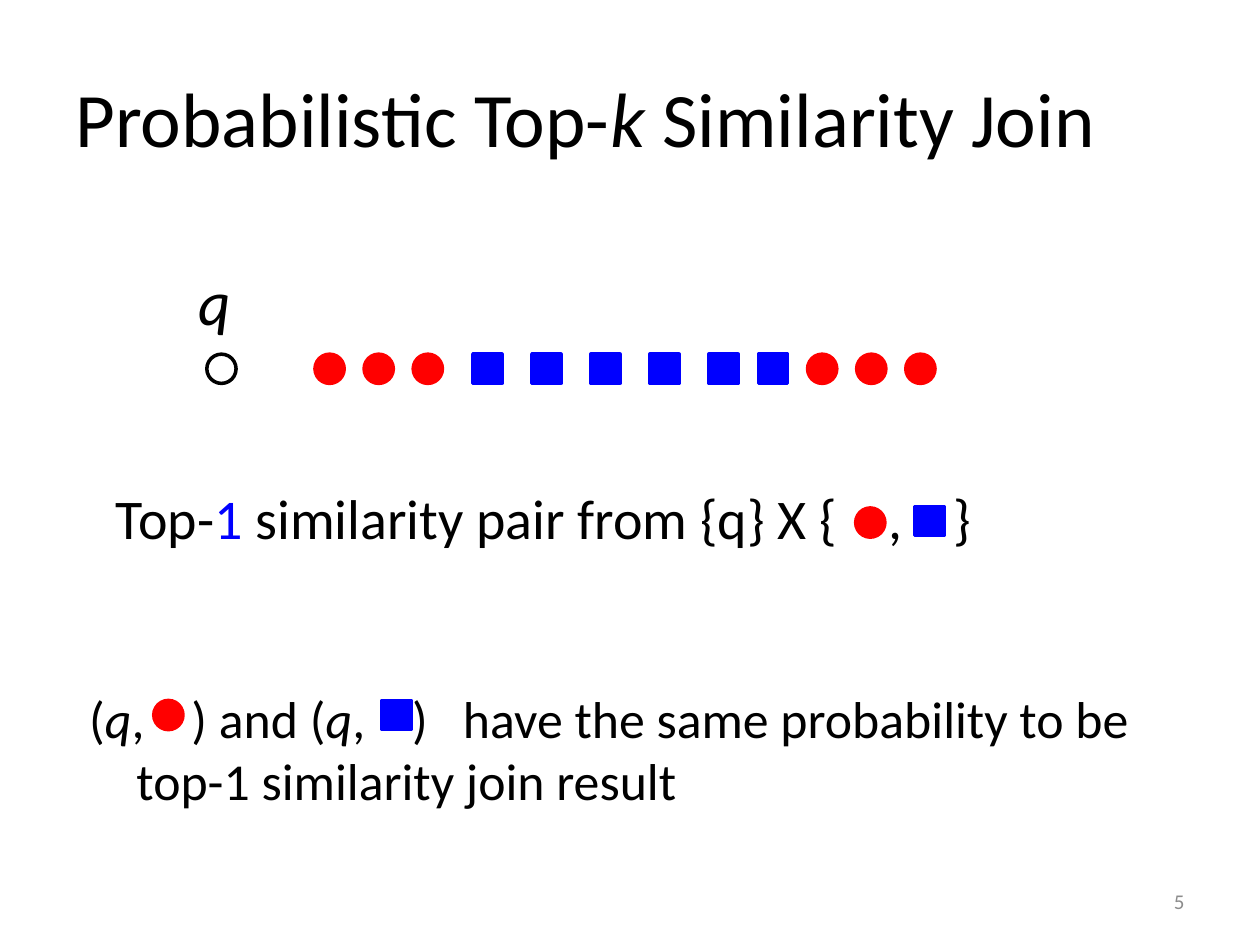
from dataclasses import dataclass

from pptx import Presentation
from pptx import util as u
from pptx.dml.color import RGBColor
from pptx.enum import shapes, text


@dataclass(frozen=True)
class Theme:
    font: str = "Calibri"
    black: str = "000000"
    white: str = "FFFFFF"
    red: str = "FF0000"
    blue: str = "0000FF"
    grey: str = "8C8C8C"
    title: float = 44
    label: float = 36
    pair: float = 32
    result: float = 29.6
    number: float = 12
    outline: float = 2
    space_em: float = 0.226


T = Theme()
HANG = 0.95
MARK = 0.59
ROW_TOP = 7.14

MARKS = {
    "query": (shapes.MSO_SHAPE.OVAL, T.white, T.black),
    "dot": (shapes.MSO_SHAPE.OVAL, T.red, T.red),
    "square": (shapes.MSO_SHAPE.RECTANGLE, T.blue, T.blue),
}

ROW = [
    ("query", 4.17, 0, 1),
    ("dot", 6.35, 0.99, 3),
    ("square", 9.53, 1.19, 5),
    ("square", 15.29, 0, 1),
    ("dot", 16.28, 0.99, 3),
]

INLINE_MARKS = [
    ("dot", 3.1, 14.12),
    ("square", 7.7, 14.12),
    ("dot", 17.25, 10.24),
    ("square", 18.44, 10.21),
]

TITLE = [("Probabilistic Top-",), ("k", "i"), (" Similarity Join",)]
LABEL = [("q", "i")]
PAIR = [(" Top-",), ("1", "blue"), (" similarity pair from {q} X {",),
        (" ", 4), (",",), (" ", 4), ("}",)]
RESULT = [("(",), ("q", "i"), (",",), (" ", 4), (") and (",), ("q", "i"),
          (",",), (" ", 4), (")",), (" ", 3),
          ("have the same probability to be top-1 similarity join result",)]
NUMBER = [("5", "grey")]

LEFT, RIGHT = text.PP_ALIGN.LEFT, text.PP_ALIGN.RIGHT
TOP, MIDDLE = text.MSO_ANCHOR.TOP, text.MSO_ANCHOR.MIDDLE

TEXTS = [
    (TITLE, (1.27, 0.76, 22.86, 3.18), T.title, MIDDLE, LEFT, 0, True),
    (NUMBER, (18.21, 17.65, 5.92, 1.02), T.number, MIDDLE, RIGHT, 0, True),
    (LABEL, (3.76, 5.16, 1.17, 1.8), T.label, TOP, LEFT, 0, False),
    (RESULT, (1.55, 13.72, 23.16, 2.69), T.result, TOP, LEFT, HANG, True),
    (PAIR, (1.83, 9.63, 22.86, 2.31), T.pair, TOP, LEFT, HANG, True),
]


def add_text(slide, runs, box, size, anchor, align, hang, wrap):
    """Add a text box whose runs may be italic, coloured or a widened space."""
    tf = slide.shapes.add_textbox(*map(u.Cm, box)).text_frame
    tf.word_wrap = wrap
    tf.vertical_anchor = anchor
    p = tf.paragraphs[0]
    p.alignment = align
    if hang:
        pPr = p._p.get_or_add_pPr()
        pPr.set("marL", str(u.Cm(hang)))
        pPr.set("indent", str(-u.Cm(hang)))
    for words, *style in runs:
        r = p.add_run()
        r.text = words
        r.font.name = T.font
        r.font.size = u.Pt(size)
        r.font.italic = "i" in style
        color = next((getattr(T, s) for s in style if s in ("blue", "grey")), T.black)
        r.font.color.rgb = RGBColor.from_string(color)
        if style and isinstance(style[0], int):
            extra = (style[0] - 1) * T.space_em * size
            r.font._element.set("spc", str(round(extra * 100)))


def add_mark(slide, kind, left, top):
    """Add one query, dot or square symbol."""
    preset, fill, line = MARKS[kind]
    sp = slide.shapes.add_shape(preset, *map(u.Cm, (left, top, MARK, MARK)))
    sp.shadow.inherit = False
    sp.fill.solid()
    sp.fill.fore_color.rgb = RGBColor.from_string(fill)
    sp.line.color.rgb = RGBColor.from_string(line)
    sp.line.width = u.Pt(T.outline)


def main():
    """Build the slide and save it."""
    prs = Presentation()
    prs.slide_width, prs.slide_height = u.Cm(25.4), u.Cm(19.05)
    slide = prs.slides.add_slide(prs.slide_layouts[6])
    for item in TEXTS:
        add_text(slide, *item)
    for kind, left, pitch, count in ROW:
        for i in range(count):
            add_mark(slide, kind, left + i * pitch, ROW_TOP)
    for mark in INLINE_MARKS:
        add_mark(slide, *mark)
    prs.save("out.pptx")


if __name__ == "__main__":
    main()
